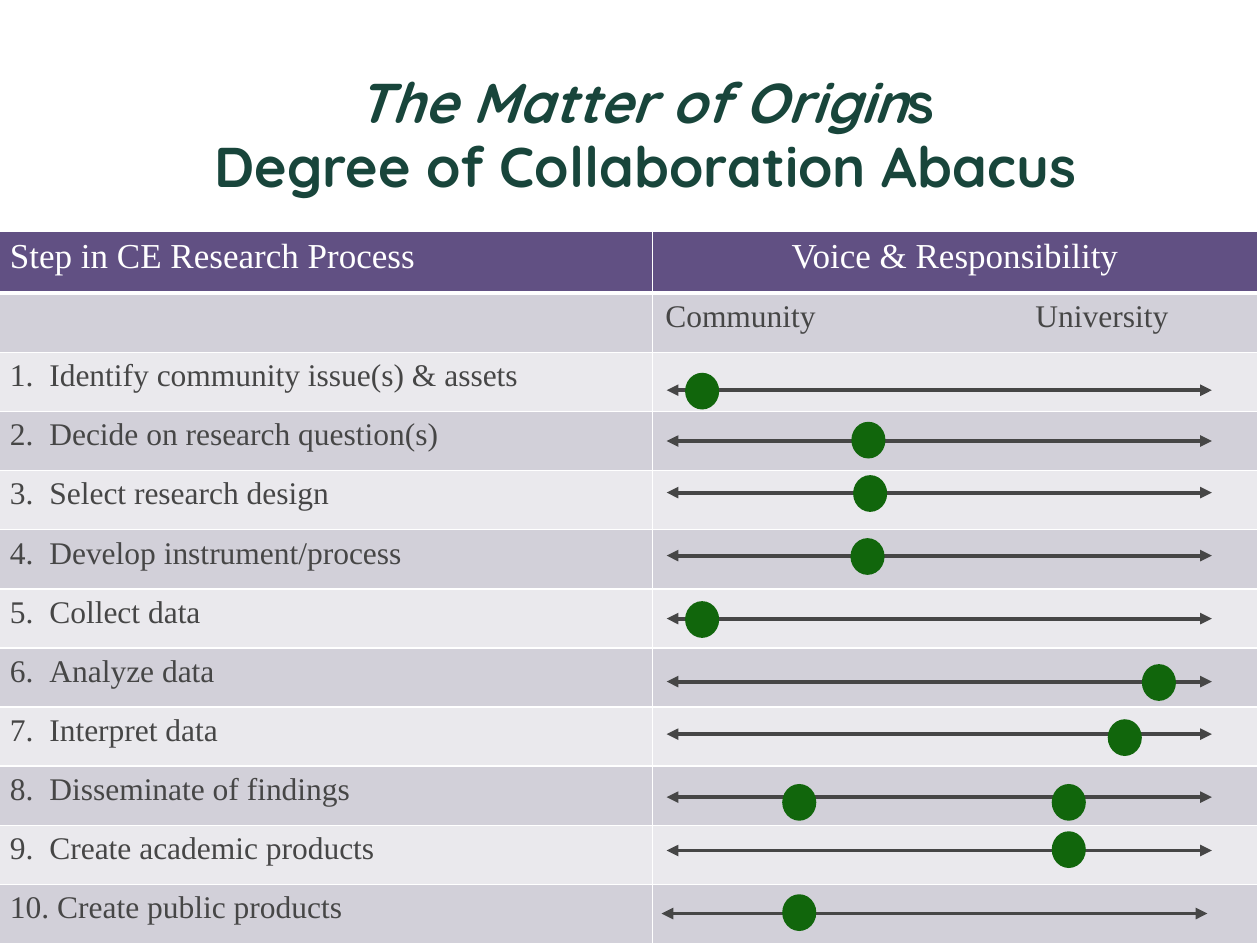
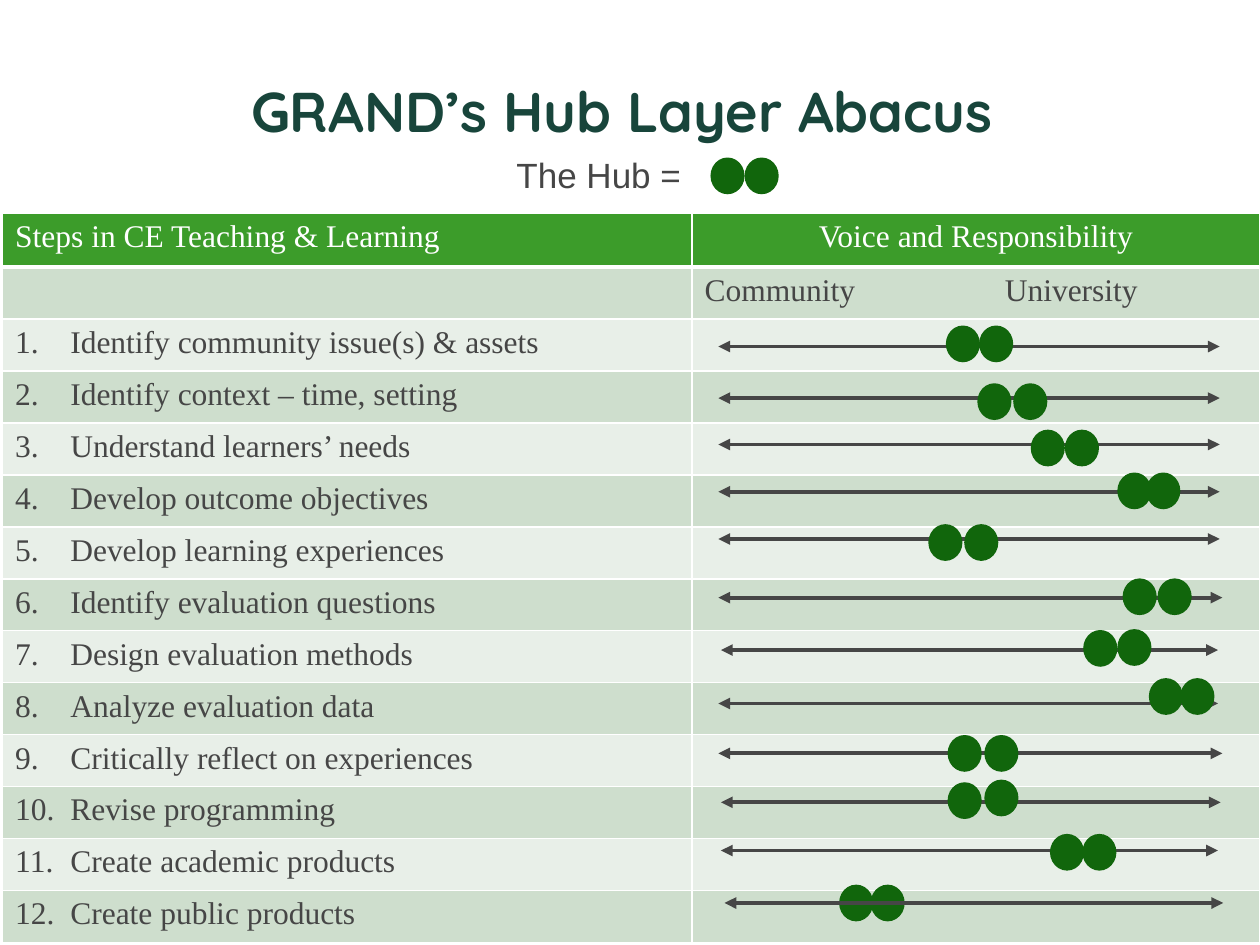
from dataclasses import dataclass

from lxml import etree
from pptx import Presentation
from pptx.dml.color import RGBColor
from pptx.enum.shapes import MSO_CONNECTOR, MSO_SHAPE
from pptx.enum.text import MSO_ANCHOR, PP_ALIGN
from pptx.oxml.ns import qn
from pptx.util import Pt

STRAIGHT = MSO_CONNECTOR.STRAIGHT
OVAL = MSO_SHAPE.OVAL
MIDDLE = MSO_ANCHOR.MIDDLE
CENTER = PP_ALIGN.CENTER
LEFT = PP_ALIGN.LEFT


@dataclass(frozen=True)
class Theme:
    title_color: str = "18453B"
    text_color: str = "464646"
    bead_color: str = "11660C"
    white: str = "FFFFFF"
    title_font: str = "Quicksand"
    table_font: str = "Times New Roman"
    key_font: str = "Arial"
    title_size: float = 32
    key_size: float = 20
    body_size: float = 18
    arrow_width: float = 2.25
    bead_width: float = 19.5
    bead_height: float = 21


theme = Theme()

abacuses = [
    {
        "title_box": (36, 54, 666, 48),
        "title_lines": [
            [("The Matter of Origin", True), ("s", False)],
            [("Degree of Collaboration Abacus", False)],
        ],
        "table_position": (-1.5, 132),
        "column_widths": (374.5, 345.5),
        "header_height": 35.5,
        "row_height": 33.8,
        "header_size": 20,
        "headings": ("Step in CE Research Process", "Voice & Responsibility"),
        "fills": ("615083", "D2D0D9", "EAE9ED"),
        "step_tabs": (22.5, 27),
        "scale_tab": 211.5,
        "key": None,
        "key_beads": [],
        "front_arrows": set(),
        "steps": [
            ("Identify community issue(s) & assets", (381, 692.5, 223), [(391.5, 213)]),
            ("Decide on research question(s)", (381, 692.5, 252), [(486.5, 241)]),
            ("Select research design", (381, 692.5, 281.5), [(487.5, 271.5)]),
            ("Develop instrument/process", (381, 692.5, 317.5), [(486, 307.5)]),
            ("Collect data", (381, 692.5, 353.5), [(391.5, 343.5)]),
            ("Analyze data", (381, 692.5, 389.5), [(652.5, 379.5)]),
            ("Interpret data", (381, 692.5, 419.5), [(633, 411)]),
            ("Disseminate of findings", (381, 692.5, 455.5), [(447, 448), (601, 448)]),
            ("Create academic products", (381, 692.5, 486), [(601, 475)]),
            ("Create public products", (378, 690, 522), [(447, 511)]),
        ],
    },
    {
        "title_box": (31.5, 40.5, 648, 48),
        "title_lines": [[("GRAND’s Hub Layer Abacus", False)]],
        "table_position": (1.5, 121.7),
        "column_widths": (394, 324.5),
        "header_height": 31,
        "row_height": 29.7,
        "header_size": 18,
        "headings": ("Steps in CE Teaching & Learning", "Voice and Responsibility"),
        "fills": ("3C9C2A", "CEDECD", "E8EFE8"),
        "step_tabs": (31.5,),
        "scale_tab": 171.5,
        "key": "The Hub =",
        "key_beads": [(406, 90), (425.5, 90)],
        "front_arrows": {12},
        "steps": [
            ("Identify community issue(s) & assets", (410.5, 697, 198), [(540.5, 186), (559.5, 186)]),
            ("Identify context – time, setting", (410.5, 697, 227.5), [(558.5, 219), (579, 219)]),
            ("Understand learners’ needs", (410.5, 697, 254), [(589, 245.5), (608.5, 245.5)]),
            ("Develop outcome objectives", (410.5, 697, 281), [(638.5, 270), (655, 270)]),
            ("Develop learning experiences", (410.5, 697, 308), [(530.5, 299.5), (551, 299.5)]),
            ("Identify evaluation questions", (410.5, 698.5, 341.5), [(641.5, 330.5), (661.5, 330.5)]),
            ("Design evaluation methods", (412, 696, 371.5), [(619, 360), (638.5, 359.5)]),
            ("Analyze evaluation data", (410.5, 696, 402), [(656.5, 387.5), (674.5, 387.5)]),
            ("Critically reflect on experiences", (410.5, 698.5, 430.5), [(541.5, 420), (562.5, 420)]),
            ("Revise programming", (412, 697.5, 458.5), [(541.5, 447), (562.5, 445.5)]),
            ("Create academic products", (412, 696, 486), [(600, 476.5), (618.5, 476.5)]),
            ("Create public products", (414, 699, 516), [(479.5, 505.5), (497.5, 505.5)]),
        ],
    },
]


def add_run(paragraph, text, font_name, size, color, bold=False, italic=False):
    run = paragraph.add_run()
    run.text = text
    run.font.name = font_name
    run.font.size = Pt(size)
    run.font.color.rgb = RGBColor.from_string(color)
    run.font.bold = bold
    run.font.italic = italic


def add_arrow(slide, left, right, y):
    arrow = slide.shapes.add_connector(STRAIGHT, Pt(left), Pt(y), Pt(right), Pt(y))
    arrow.line.color.rgb = RGBColor.from_string(theme.text_color)
    arrow.line.width = Pt(theme.arrow_width)
    properties = arrow._element.spPr
    line = properties.find(qn("a:ln"))
    for end in ("a:headEnd", "a:tailEnd"):
        etree.SubElement(line, qn(end), type="triangle")
    etree.SubElement(properties, qn("a:effectLst"))


presentation = Presentation()
presentation.slide_width = Pt(720)
presentation.slide_height = Pt(540)

for abacus in abacuses:
    slide = presentation.slides.add_slide(presentation.slide_layouts[6])

    title = slide.shapes.add_textbox(*[Pt(length) for length in abacus["title_box"]])
    title.text_frame.word_wrap = True
    title.text_frame.vertical_anchor = MIDDLE
    paragraph = title.text_frame.paragraphs[0]
    paragraph.alignment = CENTER
    paragraph.line_spacing = 0.95
    for index, title_line in enumerate(abacus["title_lines"]):
        if index:
            paragraph.add_line_break()
        for text, italic in title_line:
            add_run(paragraph, text, theme.title_font, theme.title_size, theme.title_color, True, italic)

    steps = abacus["steps"]
    rows = [abacus["headings"], ("", "Community\tUniversity")]
    rows += [(f"{number}.\t{step[0]}", "") for number, step in enumerate(steps, 1)]
    heights = [abacus["header_height"]] + [abacus["row_height"]] * (len(rows) - 1)
    left, top = abacus["table_position"]
    table = slide.shapes.add_table(
        len(rows), 2, Pt(left), Pt(top), Pt(sum(abacus["column_widths"])), Pt(sum(heights))
    ).table
    for column, width in zip(table.columns, abacus["column_widths"]):
        column.width = Pt(width)
    header_fill, dark_fill, light_fill = abacus["fills"]
    tab_stops = (abacus["step_tabs"], (abacus["scale_tab"],))

    for row_index, texts in enumerate(rows):
        table.rows[row_index].height = Pt(heights[row_index])
        is_header = row_index == 0
        band_fill = dark_fill if row_index % 2 else light_fill
        for column_index, text in enumerate(texts):
            cell = table.cell(row_index, column_index)
            cell_properties = cell._tc.get_or_add_tcPr()
            for side in "LRTB":
                border_width = 3 if is_header and side == "B" else 1
                border = etree.SubElement(cell_properties, qn(f"a:ln{side}"), w=str(Pt(border_width)))
                border_fill = etree.SubElement(border, qn("a:solidFill"))
                etree.SubElement(border_fill, qn("a:srgbClr"), val=theme.white)
            cell.fill.solid()
            cell.fill.fore_color.rgb = RGBColor.from_string(header_fill if is_header else band_fill)
            if not text:
                continue
            paragraph = cell.text_frame.paragraphs[0]
            paragraph.alignment = CENTER if is_header and column_index else LEFT
            if "\t" in text:
                tab_list = etree.SubElement(paragraph._p.get_or_add_pPr(), qn("a:tabLst"))
                for stop in tab_stops[column_index]:
                    etree.SubElement(tab_list, qn("a:tab"), pos=str(Pt(stop)), algn="l")
            size = abacus["header_size"] if is_header else theme.body_size
            color = theme.white if is_header else theme.text_color
            add_run(paragraph, text, theme.table_font, size, color)

    if abacus["key"]:
        key = slide.shapes.add_textbox(Pt(288), Pt(84.25), Pt(112.5), Pt(31.5))
        key.text_frame.word_wrap = True
        add_run(key.text_frame.paragraphs[0], abacus["key"], theme.key_font, theme.key_size, theme.text_color)

    for number, (_, arrow_ends, _) in enumerate(steps, 1):
        if number not in abacus["front_arrows"]:
            add_arrow(slide, *arrow_ends)

    beads = abacus["key_beads"] + [bead for step in steps for bead in step[2]]
    for bead_left, bead_top in beads:
        bead = slide.shapes.add_shape(
            OVAL, Pt(bead_left), Pt(bead_top), Pt(theme.bead_width), Pt(theme.bead_height)
        )
        bead.shadow.inherit = False
        bead.fill.solid()
        bead.fill.fore_color.rgb = RGBColor.from_string(theme.bead_color)
        bead.line.fill.background()

    for number in abacus["front_arrows"]:
        add_arrow(slide, *steps[number - 1][1])

presentation.save("out.pptx")
